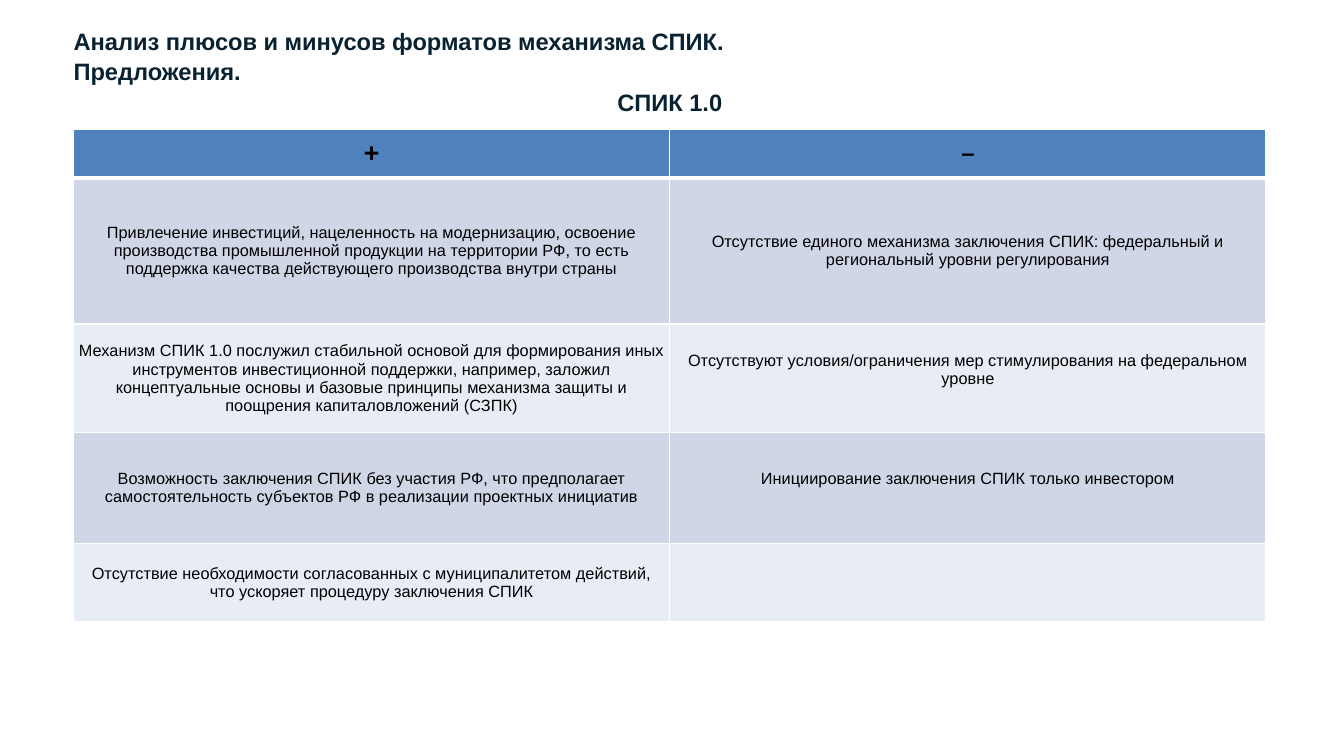
from lxml import etree
from pptx import Presentation
from pptx.dml.color import RGBColor
from pptx.enum.text import MSO_ANCHOR, MSO_AUTO_SIZE, PP_ALIGN
from pptx.oxml.ns import qn
from pptx.util import Pt

PX = 9144
LEFT, MID = PP_ALIGN.LEFT, PP_ALIGN.CENTER
TOP, MIDDLE = MSO_ANCHOR.TOP, MSO_ANCHOR.MIDDLE
FIXED = MSO_AUTO_SIZE.NONE
NAVY, BLACK, WHITE, BLUE = "092231", "000000", "FFFFFF", "4F81BD"
BANDS = ["E8ECF4", "CFD7E7"]


def color(code):
    return RGBColor.from_string(code)


def write(frame, text, size, bold, code, align, space):
    frame.text = text
    para = frame.paragraphs[0]
    para.alignment = align
    para.line_spacing = space
    look = {"name": "Arial", "size": Pt(size), "bold": bold}
    for run in para.runs:
        for key, value in look.items():
            setattr(run.font, key, value)
        run.font.color.rgb = color(code)


deck = Presentation()
deck.slide_width, deck.slide_height = 1260 * PX, 709 * PX
slide = deck.slides.add_slide(deck.slide_layouts[5])

title = slide.shapes.title
label = slide.shapes.add_textbox(0, 0, PX, PX)
heads = [
    (title, "Анализ плюсов и минусов форматов механизма СПИК.\vПредложения.",
     (69, 23, 644, 86), LEFT),
    (label, "СПИК 1.0", (306, 81, 644, 57), MID),
]
for shape, text, box, align in heads:
    for key, value in zip(("left", "top", "width", "height"), box):
        setattr(shape, key, value * PX)
    frame = shape.text_frame
    form = {"margin_left": 0, "margin_right": 0, "margin_top": 0,
            "margin_bottom": 0, "word_wrap": True,
            "auto_size": FIXED, "vertical_anchor": TOP}
    for key, value in form.items():
        setattr(frame, key, value)
    write(frame, text, 16, True, NAVY, align, 1.07)

rows = [
    (46, "+", "–", 5),
    (137, "Привлечение инвестиций, нацеленность на модернизацию, освоение "
     "производства промышленной продукции на территории РФ, то есть "
     "поддержка качества действующего производства внутри страны",
     "Отсутствие единого механизма заключения СПИК: федеральный и "
     "региональный уровни регулирования", 5),
    (102, "Механизм СПИК 1.0 послужил стабильной основой для формирования "
     "иных инструментов инвестиционной поддержки, например, заложил "
     "концептуальные основы и базовые принципы механизма защиты и "
     "поощрения капиталовложений (СЗПК)",
     "Отсутствуют условия/ограничения мер стимулирования на федеральном "
     "уровне", 22),
    (104, "Возможность заключения СПИК без участия РФ, что предполагает "
     "самостоятельность субъектов РФ в реализации проектных инициатив",
     "Инициирование заключения СПИК только инвестором", 22),
    (73, "Отсутствие необходимости согласованных с муниципалитетом действий, "
     "что ускоряет процедуру заключения СПИК", "", 5),
]
high = sum(row[0] for row in rows)
table = slide.shapes.add_table(
    len(rows), 2, 69 * PX, 121 * PX, 1118 * PX, high * PX).table
for col in table.columns:
    col.width = 559 * PX

for i, (tall, plus, minus, foot) in enumerate(rows):
    table.rows[i].height = tall * PX
    for j, text in enumerate((plus, minus)):
        cell = table.cell(i, j)
        form = {"margin_left": 5 * PX, "margin_right": 5 * PX,
                "margin_top": 5 * PX, "vertical_anchor": MIDDLE,
                "margin_bottom": (foot if j else 5) * PX}
        for key, value in form.items():
            setattr(cell, key, value)
        size = 11 if i else (18, 16)[j]
        write(cell.text_frame, text, size, i == 0, BLACK, MID, 1.0)
        cell.fill.solid()
        cell.fill.fore_color.rgb = color(BANDS[i % 2] if i else BLUE)
        props = cell._tc.get_or_add_tcPr()
        for n, side in enumerate(("lnL", "lnR", "lnT", "lnB")):
            thick = (i, side) in ((0, "lnB"), (1, "lnT"))
            line = etree.Element(qn("a:" + side), w=str(Pt(3 if thick else 1)))
            fill = etree.SubElement(line, qn("a:solidFill"))
            etree.SubElement(fill, qn("a:srgbClr"), val=WHITE)
            props.insert(n, line)

deck.save("out.pptx")
